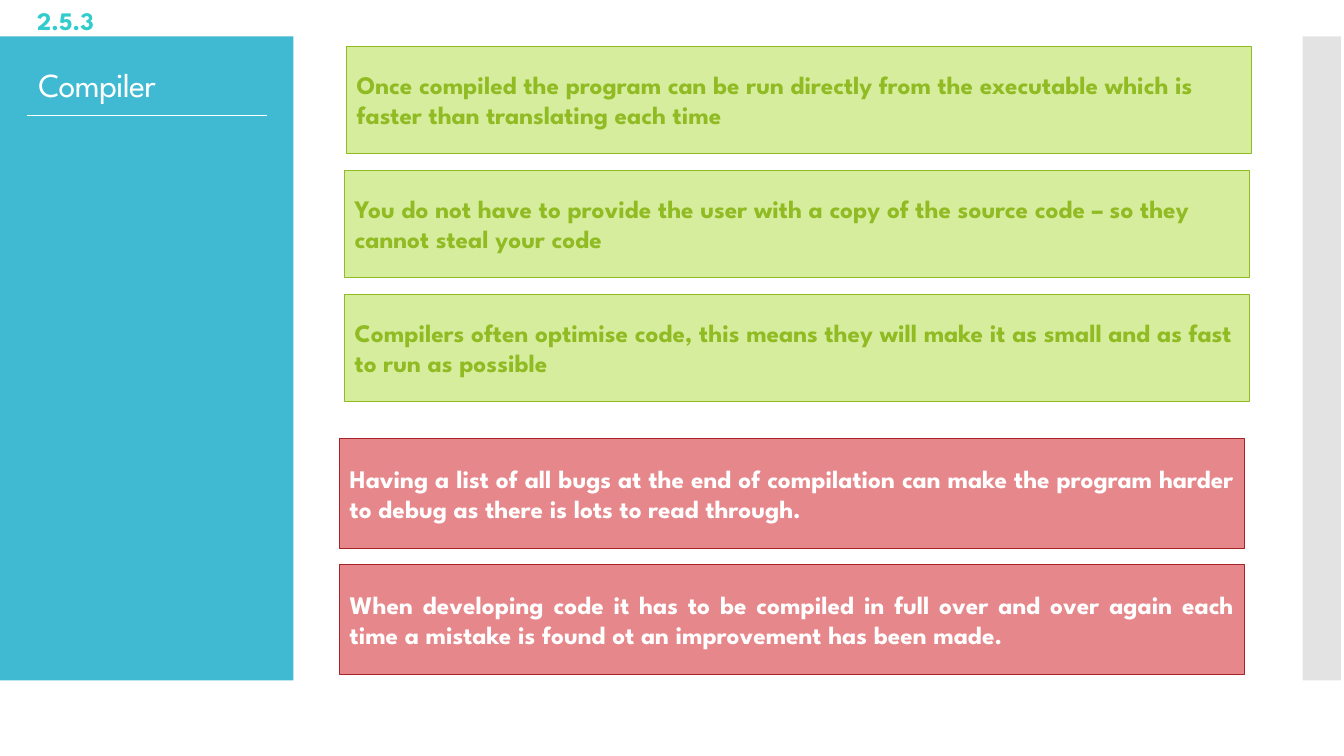
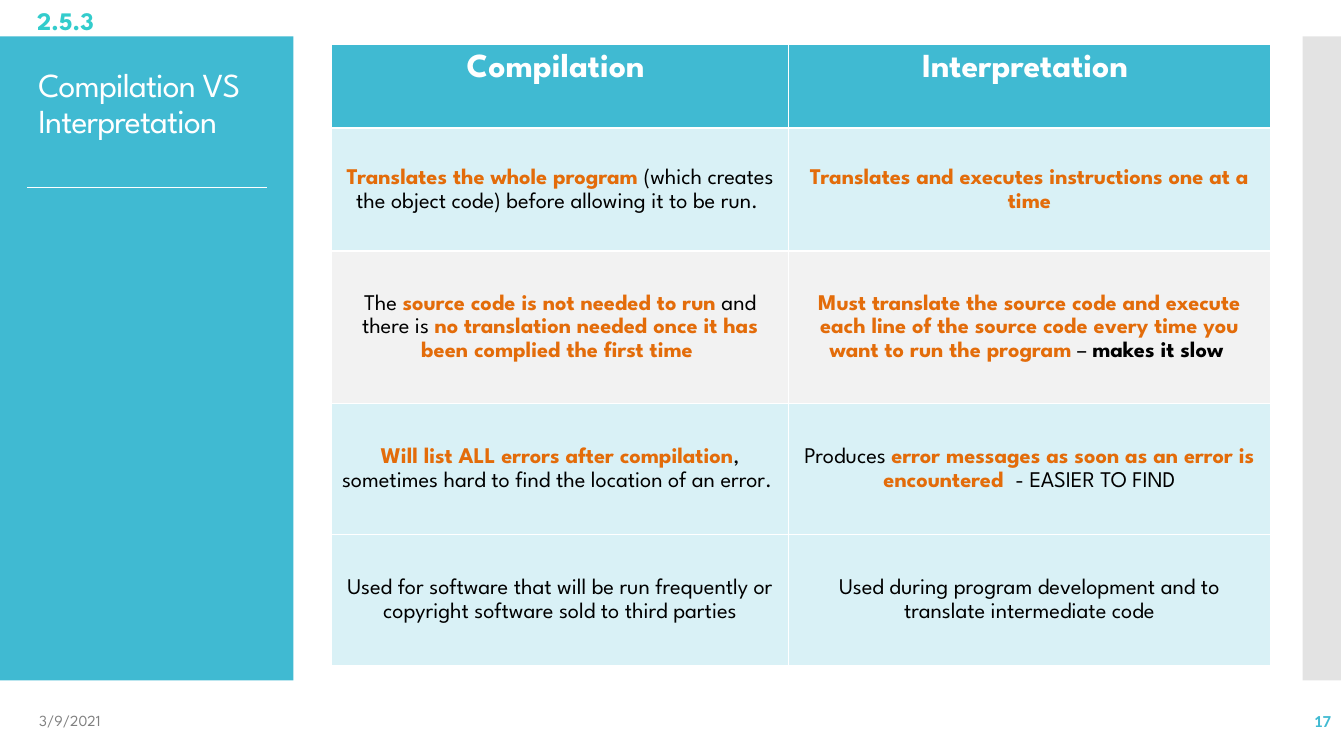
from lxml import etree
from pptx import Presentation
from pptx.dml.color import RGBColor
from pptx.enum.shapes import MSO_CONNECTOR, MSO_SHAPE
from pptx.enum.text import MSO_ANCHOR, MSO_AUTO_SIZE, PP_ALIGN
from pptx.oxml.ns import qn
from pptx.util import Inches, Pt

LEFT, CENTER, RIGHT, JUSTIFY = PP_ALIGN.LEFT, PP_ALIGN.CENTER, PP_ALIGN.RIGHT, PP_ALIGN.JUSTIFY
TOP, MIDDLE = MSO_ANCHOR.TOP, MSO_ANCHOR.MIDDLE
RECTANGLE, STRAIGHT = MSO_SHAPE.RECTANGLE, MSO_CONNECTOR.STRAIGHT

WHITE = RGBColor(0xFF, 0xFF, 0xFF)
BLACK = RGBColor(0, 0, 0)
BLUE = RGBColor(0x40, 0xBA, 0xD2)
TURQUOISE = RGBColor(0x33, 0xCC, 0xCC)
PALE_BLUE = RGBColor(0xD9, 0xF1, 0xF6)
PALE_GREY = RGBColor(0xF2, 0xF2, 0xF2)
BAND_GREY = RGBColor(0xC8, 0xC8, 0xC8)
TEXT_GREY = RGBColor(0x80, 0x80, 0x80)
ORANGE = RGBColor(0xE3, 0x6C, 0x0A)
GREEN = RGBColor(0x90, 0xBB, 0x23)
PALE_GREEN = RGBColor(0xD7, 0xED, 0x9E)
RED = RGBColor(0xA7, 0x23, 0x27)
PALE_RED = RGBColor(0xE6, 0x88, 0x8B)

FONT = "League Spartan"
NUMBER_FONT = "Calibri"
BAND_TOP, BAND_HEIGHT = 0.36, 6.39
FOOTER_TOP = 6.95
PLAIN = {"color": BLACK}
KEY = {"color": ORANGE, "bold": True}
STRONG = {"color": BLACK, "bold": True}

ADVANTAGES = [
    "Once compiled the program can be run directly from the executable which is "
    "faster than translating each time",
    "You do not have to provide the user with a copy of the source code – so they "
    "cannot steal your code",
    "Compilers often optimise code, this means they will make it as small and as fast "
    "to run as possible",
]
DRAWBACKS = [
    "Having a list of all bugs at the end of compilation can make the program harder "
    "to debug as there is lots to read through.",
    "When developing code it has to be compiled in full over and over again each "
    "time a mistake is found ot an improvement has been made.",
]

HEADINGS = ["Compilation ", "Interpretation "]
COMPARISON = [
    ([("Translates the whole program", KEY),
      (" (which creates the object code) before allowing it to be run. ", PLAIN)],
     [("Translates and executes instructions one at a time", KEY)]),
    ([("The ", PLAIN), ("source code is not needed to run", KEY), (" and there is ", PLAIN),
      ("no translation needed once it has been complied the first time ", KEY)],
     [("Must translate the source code and execute each line of the source code "
       "every time you want to run the program", KEY),
      (" – ", PLAIN), ("makes it slow ", STRONG)]),
    ([("Will list ALL errors after compilation", KEY),
      (", sometimes hard to find the location of an error. ", PLAIN)],
     [("Produces ", PLAIN), ("error messages as soon as an error is encountered  ", KEY),
      ("- EASIER TO FIND", PLAIN)]),
    ([("Used for software that will be run frequently or copyright software sold "
       "to third parties", PLAIN)],
     [("Used during program development and to translate intermediate code", PLAIN)]),
]
COLUMN_WIDTHS = [4.53, 4.78]
ROW_HEIGHTS = [0.83, 1.22, 1.51, 1.3, 1.3]
ROW_FILLS = [BLUE, PALE_BLUE, PALE_GREY, PALE_BLUE, PALE_BLUE]


def inches(*lengths):
    return [Inches(length) for length in lengths]


def add_text(para, text, size=18, color=BLACK, bold=False, font=FONT):
    span = para.add_run()
    span.text = text
    span.font.size = Pt(size)
    span.font.name = font
    span.font.bold = bold
    span.font.color.rgb = color


def add_label(page, area, text, align=LEFT, anchor=TOP, **style):
    frame = page.shapes.add_textbox(*inches(*area)).text_frame
    frame.word_wrap = True
    frame.vertical_anchor = anchor
    frame.paragraphs[0].alignment = align
    add_text(frame.paragraphs[0], text, **style)


def add_rectangle(page, area, fill, line=None):
    box = page.shapes.add_shape(RECTANGLE, *inches(*area))
    box.shadow.inherit = False
    box.fill.solid()
    box.fill.fore_color.rgb = fill
    if line is None:
        box.line.fill.background()
    else:
        box.line.color.rgb = line
        box.line.width = Pt(0.85)
    return box


def set_up_layout(layout, page):
    """Give the layout its two bands and its title area; page only lends its shape factory."""
    title = layout.placeholders[0]
    title.left, title.top, title.width, title.height = inches(0.28, 0.63, 2.3, 5.64)
    side = add_rectangle(page, (0, BAND_TOP, 2.91, BAND_HEIGHT), BLUE)
    edge = add_rectangle(page, (12.92, BAND_TOP, 0.38, BAND_HEIGHT), BAND_GREY)
    tint = edge.element.spPr.find(f"{qn('a:solidFill')}/{qn('a:srgbClr')}")
    etree.SubElement(tint, qn("a:alpha"), val="50000")
    tree = title.element.getparent()
    for band in (edge, side):
        tree.insert(2, band.element)


def add_heading(page, title, rule_top):
    """Title, the rule below it and the section number above the side band."""
    frame = page.shapes.title.text_frame
    frame.word_wrap = True
    frame.auto_size = MSO_AUTO_SIZE.NONE
    frame.vertical_anchor = TOP
    para = frame.paragraphs[0]
    para.alignment = LEFT
    para.line_spacing = 0.9
    add_text(para, title, size=24, color=WHITE)
    for properties in page.shapes.title.element.iter(qn("a:rPr")):
        properties.set("spc", "-60")
    rule = page.shapes.add_connector(STRAIGHT, *inches(0.27, rule_top, 2.65, rule_top))
    rule.line.color.rgb = WHITE
    rule.line.width = Pt(0.75)
    etree.SubElement(rule.element.spPr, qn("a:effectLst"))
    add_label(page, (0.27, 0, 2.27, 0.4), "2.5.3", color=TURQUOISE, bold=True)


def add_footer(page, date, number):
    add_label(page, (0.29, FOOTER_TOP, 3, 0.4), date, anchor=MIDDLE, size=11, color=TEXT_GREY)
    add_label(page, (11.63, FOOTER_TOP, 1.67, 0.4), number, align=RIGHT, anchor=MIDDLE,
              size=12, color=BLUE, bold=True, font=NUMBER_FONT)


def add_statements(page, area, statements, pitch, fill, line, color, align, space_after):
    """Stack one box per statement; area is the first box."""
    left, top, width, height = area
    for index, statement in enumerate(statements):
        box = add_rectangle(page, (left, top + index * pitch, width, height), fill, line)
        frame = box.text_frame
        frame.word_wrap = True
        frame.vertical_anchor = MIDDLE
        para = frame.paragraphs[0]
        para.alignment = align
        para.space_after = Pt(space_after)
        add_text(para, statement, color=color, bold=True)


def add_comparison(page, left, top):
    area = inches(left, top, sum(COLUMN_WIDTHS), sum(ROW_HEIGHTS))
    table = page.shapes.add_table(len(ROW_HEIGHTS), len(COLUMN_WIDTHS), *area).table
    for column, width in zip(table.columns, COLUMN_WIDTHS):
        column.width = Inches(width)
    header = [[(heading, {"size": 24, "color": WHITE, "bold": True})] for heading in HEADINGS]
    for index, contents in enumerate([header, *COMPARISON]):
        table.rows[index].height = Inches(ROW_HEIGHTS[index])
        for cell, spans in zip(table.rows[index].cells, contents):
            cell.fill.solid()
            cell.fill.fore_color.rgb = ROW_FILLS[index]
            cell.vertical_anchor = MIDDLE if index else TOP
            para = cell.text_frame.paragraphs[0]
            para.alignment = CENTER
            para.line_spacing = 1.15
            for text, style in spans:
                add_text(para, text, **{"size": 16, **style})


def build_compiler(page):
    add_heading(page, "Compiler", 1.15)
    add_statements(page, (3.44, 0.46, 8.97, 1.06), ADVANTAGES[:1], 1.23,
                   PALE_GREEN, GREEN, GREEN, LEFT, 24)
    add_statements(page, (3.42, 1.69, 8.97, 1.06), ADVANTAGES[1:], 1.23,
                   PALE_GREEN, GREEN, GREEN, LEFT, 24)
    add_statements(page, (3.37, 4.35, 8.97, 1.09), DRAWBACKS, 1.25,
                   PALE_RED, RED, WHITE, JUSTIFY, 18)


def build_versus(page):
    add_heading(page, "Compilation VS Interpretation", 1.86)
    add_comparison(page, 3.29, 0.44)
    add_footer(page, "3/9/2021", "17")


def main():
    deck = Presentation()
    deck.slide_width, deck.slide_height = inches(13.33, 7.5)
    layout = deck.slide_layouts.get_by_name("Title Only")
    compiler, versus = [deck.slides.add_slide(layout) for _ in range(2)]
    set_up_layout(layout, compiler)
    build_compiler(compiler)
    build_versus(versus)
    deck.save("out.pptx")


if __name__ == "__main__":
    main()
